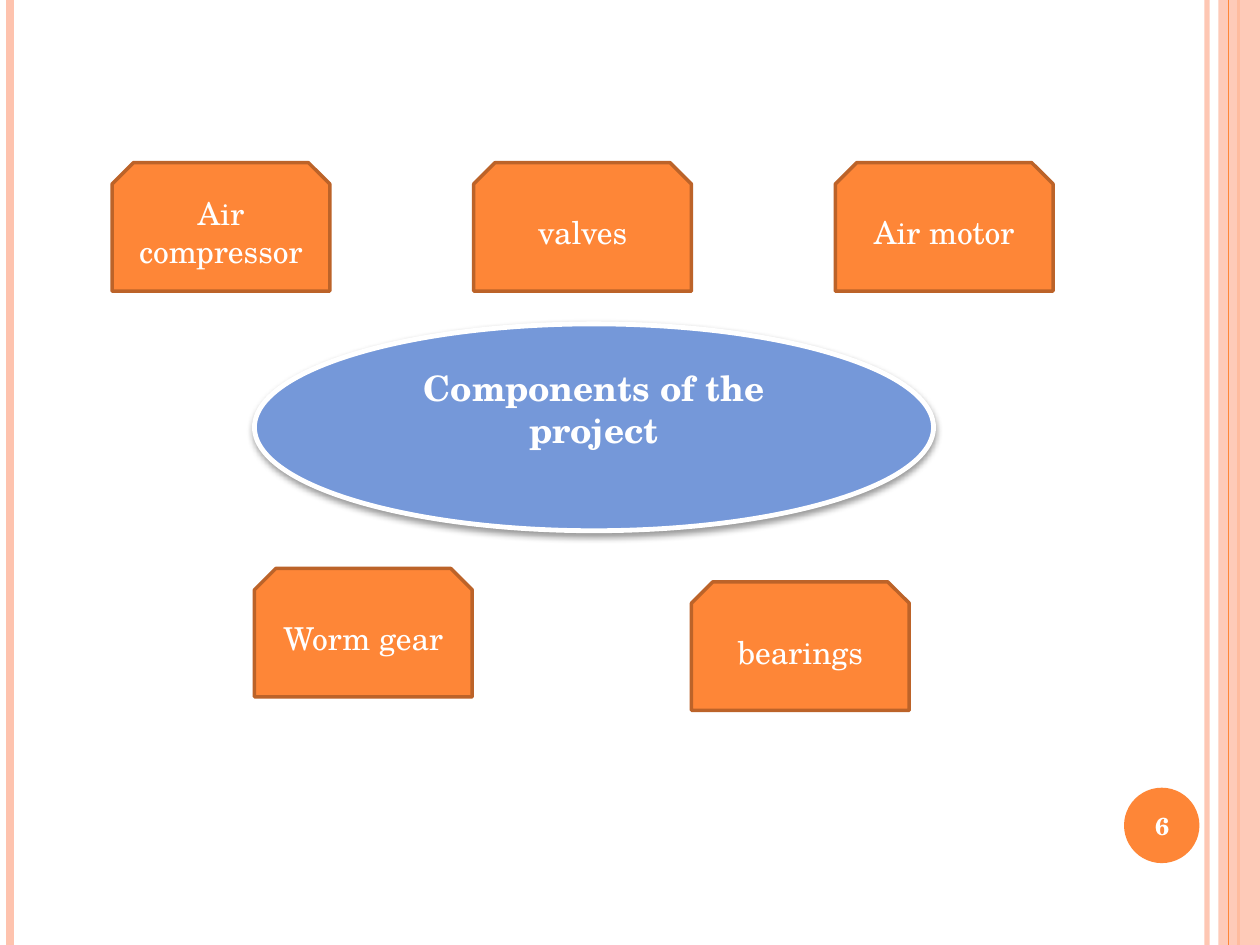
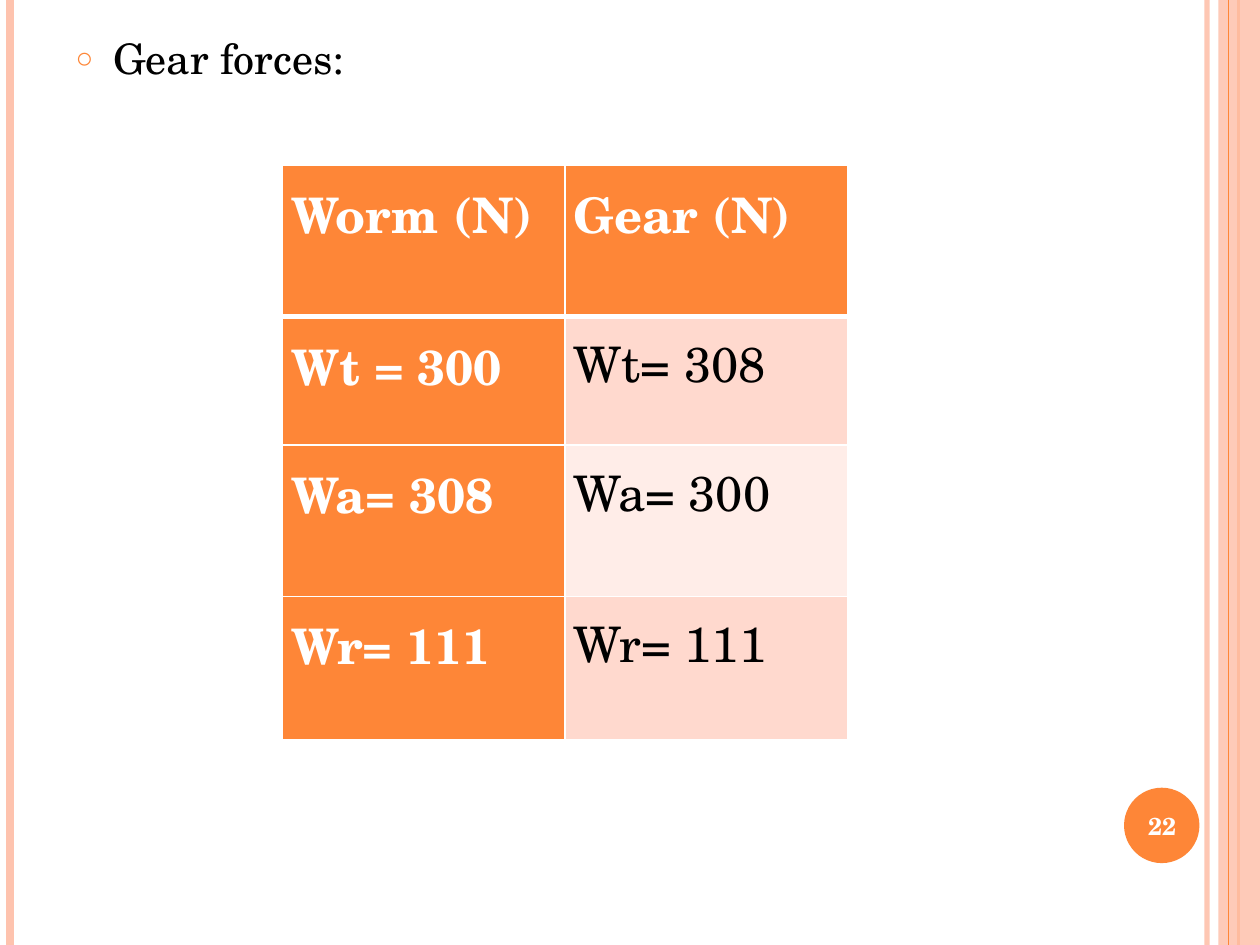
from lxml import etree
from pptx import Presentation
from pptx import util as u
from pptx.dml.color import RGBColor
from pptx.enum import shapes, text
from pptx.oxml.ns import qn

Cm, Pt = u.Cm, u.Pt

COLORS = {
    "orange": "FE8637", "brown": "BC6329", "peach": "FEC3AE", "blue": "7598D9",
    "band": "FFD9CE", "pale band": "FFEDE8", "white": "FFFFFF", "black": "000000",
}
FONT = "TeX Gyre Schola"
WIDTH, HEIGHT = 25.4, 19.05

# Slide content
HUB = "Components of the project"
CARD_SIZE = (4.39, 2.59)
TOP_ROW = ["Air compressor", "valves", "Air motor"]
TOP_ROW_START, TOP_ROW_STEP = (2.26, 3.28), 7.29
LOWER_CARDS = [("Worm gear", 5.13, 11.46), ("bearings", 13.94, 11.73)]

FORCES_HEADING = "Gear forces:"
FORCES = [
    ("Worm (N)", "Gear (N)"),
    ("Wt = 300", "Wt= 308"),
    ("Wa= 308", "Wa= 300"),
    ("Wr= 111", "Wr= 111"),
]
ROW_HEIGHTS = [3.05, 2.59, 3.05, 2.9]
COLUMN_WIDTH = 5.7


def rgb(name):
    return RGBColor.from_string(COLORS[name])


def add_node(parent, tag, **attributes):
    values = {key: str(value) for key, value in attributes.items()}
    return etree.SubElement(parent, qn(tag), values)


def set_alpha(fill_owner, percent):
    color = next(fill_owner.iter(qn("a:srgbClr")))
    add_node(color, "a:alpha", val=percent * 1000)


def set_font(paragraph, size, color="white", bold=False):
    font = paragraph.font
    font.name, font.size, font.bold = FONT, Pt(size), bold
    font.color.rgb = rgb(color)


def write(shape, words, size, bold=False):
    """Put one centred white paragraph in the middle of the shape."""
    frame = shape.text_frame
    frame.word_wrap = True
    frame.vertical_anchor = text.MSO_ANCHOR.MIDDLE
    paragraph = frame.paragraphs[0]
    paragraph.text = words
    paragraph.alignment = text.PP_ALIGN.CENTER
    set_font(paragraph, size, bold=bold)


def add_shape(slide, kind, box, fill, line=None, line_width=2):
    shape = slide.shapes.add_shape(kind, *map(Cm, box))
    shape.shadow.inherit = False
    shape.fill.solid()
    shape.fill.fore_color.rgb = rgb(fill)
    if line:
        shape.line.color.rgb = rgb(line)
        shape.line.width = Pt(line_width)
    else:
        shape.line.fill.background()
    return shape


def add_stripe(slide, x, color, width):
    """Draw a vertical line over the full slide height."""
    stripe = slide.shapes.add_connector(
        shapes.MSO_CONNECTOR.STRAIGHT, Cm(x), 0, Cm(x), Cm(HEIGHT))
    stripe.line.color.rgb = rgb(color)
    stripe.line.width = Pt(width)
    add_node(stripe._element.spPr, "a:effectLst")
    return stripe


def add_frame(slide, number):
    """Draw the side stripes and the page number badge."""
    inner_stripe = add_stripe(slide, 24.33, "peach", 3)
    set_alpha(inner_stripe._element.spPr, 93)
    add_stripe(slide, 0.2, "peach", 4.5)
    add_stripe(slide, 24.97, "orange", 1.5)
    band = add_shape(slide, shapes.MSO_SHAPE.RECTANGLE,
                     (24.56, 0, WIDTH - 24.56, HEIGHT), "peach")
    set_alpha(band._element.spPr, 87)
    add_stripe(slide, 24.77, "orange", 0.75)
    add_shape(slide, shapes.MSO_SHAPE.OVAL, (22.66, 15.88, 1.52, 1.52), "orange")
    page = slide.shapes.add_textbox(*map(Cm, (22.58, 15.93, 1.7, 1.45)))
    write(page, str(number), 14, bold=True)


def add_hub(slide):
    hub = add_shape(slide, shapes.MSO_SHAPE.OVAL, (5.13, 6.53, 13.69, 4.17),
                    "blue", "white", 2.75)
    write(hub, HUB, 20, bold=True)
    hub.text_frame.margin_bottom = Cm(0.9)
    effects = hub._element.spPr.find(qn("a:effectLst"))
    shadow = add_node(effects, "a:outerShdw", blurRad=Pt(4), dist=Pt(2),
                      dir=90 * 60000, rotWithShape=0)
    add_node(shadow, "a:srgbClr", val=COLORS["black"])
    set_alpha(shadow, 40)


def build_components(presentation):
    slide = presentation.slides.add_slide(presentation.slide_layouts[6])
    add_frame(slide, 6)
    add_hub(slide)
    left, top = TOP_ROW_START
    cards = [(name, left + i * TOP_ROW_STEP, top) for i, name in enumerate(TOP_ROW)]
    for name, x, y in cards + LOWER_CARDS:
        card = add_shape(slide, shapes.MSO_SHAPE.SNIP_2_SAME_RECTANGLE,
                         (x, y, *CARD_SIZE), "orange", "brown")
        write(card, name, 18)


def add_heading(slide):
    body = slide.placeholders[1]
    body.left, body.top, body.width, body.height = map(Cm, (1.27, 0.53, 20.75, 17.45))
    paragraph = body.text_frame.paragraphs[0]
    paragraph.text = FORCES_HEADING
    paragraph.space_before = Pt(6)
    properties = paragraph._p.get_or_add_pPr()
    properties.set("marL", str(Cm(0.76)))
    properties.set("indent", str(-Cm(0.76)))
    bullet_color = add_node(properties, "a:buClr")
    add_node(bullet_color, "a:srgbClr", val=COLORS["orange"])
    add_node(properties, "a:buSzPct", val=70000)
    add_node(properties, "a:buChar", char="○")
    set_font(paragraph, 24, "black")


def set_borders(cell, is_header, below_header):
    properties = cell._tc.get_or_add_tcPr()
    for side in "LRTB":
        thick = (is_header and side == "B") or (below_header and side == "T")
        line = add_node(properties, f"a:ln{side}", w=Pt(3 if thick else 1))
        fill = add_node(line, "a:solidFill")
        add_node(fill, "a:srgbClr", val=COLORS["white"])


def add_forces_table(slide):
    columns = len(FORCES[0])
    table = slide.shapes.add_table(
        len(FORCES), columns, Cm(5.69), Cm(3.33),
        Cm(columns * COLUMN_WIDTH), Cm(sum(ROW_HEIGHTS))).table
    for column in table.columns:
        column.width = Cm(COLUMN_WIDTH)
    for r, (values, height) in enumerate(zip(FORCES, ROW_HEIGHTS)):
        table.rows[r].height = Cm(height)
        for c, value in enumerate(values):
            cell = table.cell(r, c)
            heading = r == 0 or c == 0
            band = "band" if r % 2 else "pale band"
            set_borders(cell, r == 0, r == 1)
            cell.fill.solid()
            cell.fill.fore_color.rgb = rgb("orange" if heading else band)
            cell.margin_left = cell.margin_right = Cm(0.18)
            cell.margin_top = cell.margin_bottom = 0
            paragraph = cell.text_frame.paragraphs[0]
            paragraph.text = value
            paragraph.alignment = text.PP_ALIGN.LEFT
            paragraph.line_spacing = 1.15
            paragraph.space_after = Pt(10)
            set_font(paragraph, 28, "white" if heading else "black", heading)


def build_forces(presentation):
    slide = presentation.slides.add_slide(presentation.slide_layouts[1])
    title = slide.shapes.title._element
    title.getparent().remove(title)
    add_frame(slide, 22)
    add_heading(slide)
    add_forces_table(slide)


def main():
    presentation = Presentation()
    presentation.slide_width, presentation.slide_height = Cm(WIDTH), Cm(HEIGHT)
    build_components(presentation)
    build_forces(presentation)
    presentation.save("out.pptx")


if __name__ == "__main__":
    main()
